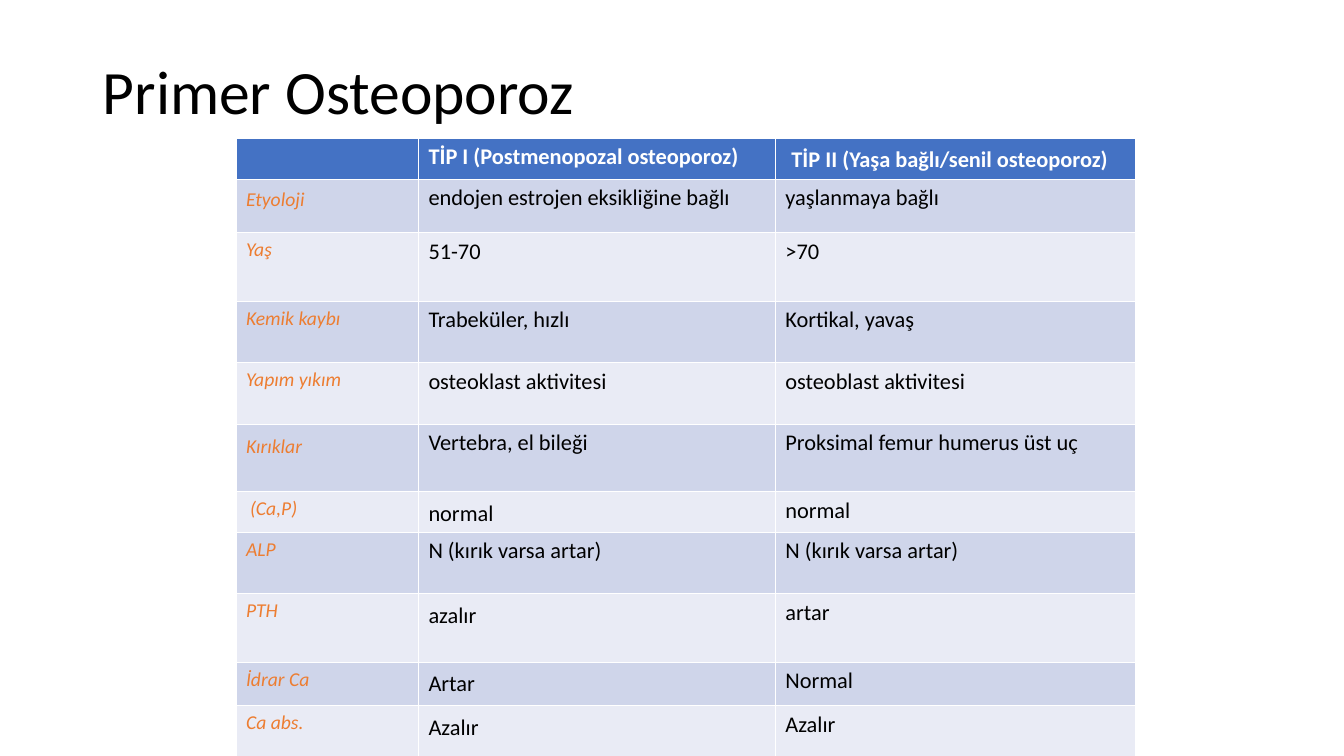
from pptx import Presentation
from pptx.dml.color import RGBColor
from pptx.enum.text import MSO_ANCHOR, PP_ALIGN
from pptx.util import Inches, Pt

LEFT = PP_ALIGN.LEFT
MIDDLE = MSO_ANCHOR.MIDDLE
COLORS = {"header": "4472C4", "band_dark": "CFD5EA", "band_light": "E9EBF5",
          "label": "ED7D31", "text": "000000", "header_text": "FFFFFF"}


def write(frame, text, size=16, color="text", bold=False, italic=False):
    paragraph = frame.paragraphs[0]
    paragraph.alignment = LEFT
    run = paragraph.add_run()
    run.text = text
    run.font.name = "Calibri"
    run.font.size = Pt(size)
    run.font.bold = bold
    run.font.italic = italic
    run.font.color.rgb = RGBColor.from_string(COLORS[color])


prs = Presentation()
prs.slide_width = Inches(13.33)
prs.slide_height = Inches(7.5)
slide = prs.slides.add_slide(prs.slide_layouts[5])

# Title
title = slide.shapes.title
title.left, title.top = Inches(0.92), Inches(0.32)
title.width, title.height = Inches(11.5), Inches(1.24)
title.text_frame.vertical_anchor = MIDDLE
write(title.text_frame, "Primer Osteoporoz", size=44)
title.text_frame.paragraphs[0].line_spacing = 0.9

# Comparison of the two types: row height, then the three cells
comparison = [
    (0.41, "", "TİP I (Postmenopozal osteoporoz)", "TİP II (Yaşa bağlı/senil osteoporoz)"),
    (0.53, "Etyoloji", "endojen estrojen eksikliğine bağlı", "yaşlanmaya bağlı"),
    (0.68, "Yaş", "51-70", ">70"),
    (0.61, "Kemik kaybı", "Trabeküler, hızlı", "Kortikal, yavaş"),
    (0.61, "Yapım yıkım", "osteoklast aktivitesi", "osteoblast aktivitesi"),
    (0.67, "Kırıklar", "Vertebra, el bileği", "Proksimal femur humerus üst uç"),
    (0.4, "(Ca,P)", "normal", "normal"),
    (0.61, "ALP", "N (kırık varsa artar)", "N (kırık varsa artar)"),
    (0.68, "PTH", "azalır", "artar"),
    (0.43, "İdrar Ca", "Artar", "Normal"),
    (0.65, "Ca abs.", "Azalır", "Azalır"),
]
# Cells whose text is shifted: (row, column) to extra left and top margin
shifts = {(0, 2): (0.06, 0.03), (1, 0): (0, 0.03), (5, 0): (0, 0.05),
          (6, 0): (0.04, 0), (6, 1): (0, 0.03), (8, 1): (0, 0.03),
          (9, 1): (0, 0.03), (10, 1): (0, 0.03)}

table = slide.shapes.add_table(len(comparison), 3, Inches(2.34), Inches(1.37),
                               Inches(8.92), Inches(6.28)).table
for column, width in zip(table.columns, (1.81, 3.54, 3.57)):
    column.width = Inches(width)

for r, (height, *texts) in enumerate(comparison):
    table.rows[r].height = Inches(height)
    band = "header" if r == 0 else "band_dark" if r % 2 else "band_light"
    for c, text in enumerate(texts):
        cell = table.cell(r, c)
        cell.fill.solid()
        cell.fill.fore_color.rgb = RGBColor.from_string(COLORS[band])
        extra_left, extra_top = shifts.get((r, c), (0, 0))
        cell.margin_left = Inches(0.1 + extra_left)
        cell.margin_top = Inches(0.05 + extra_top)
        if r == 0 and text:
            write(cell.text_frame, text, color="header_text", bold=True)
        elif c == 0 and text:
            write(cell.text_frame, text, size=14, color="label", italic=True)
        elif text:
            write(cell.text_frame, text)

prs.save("out.pptx")
